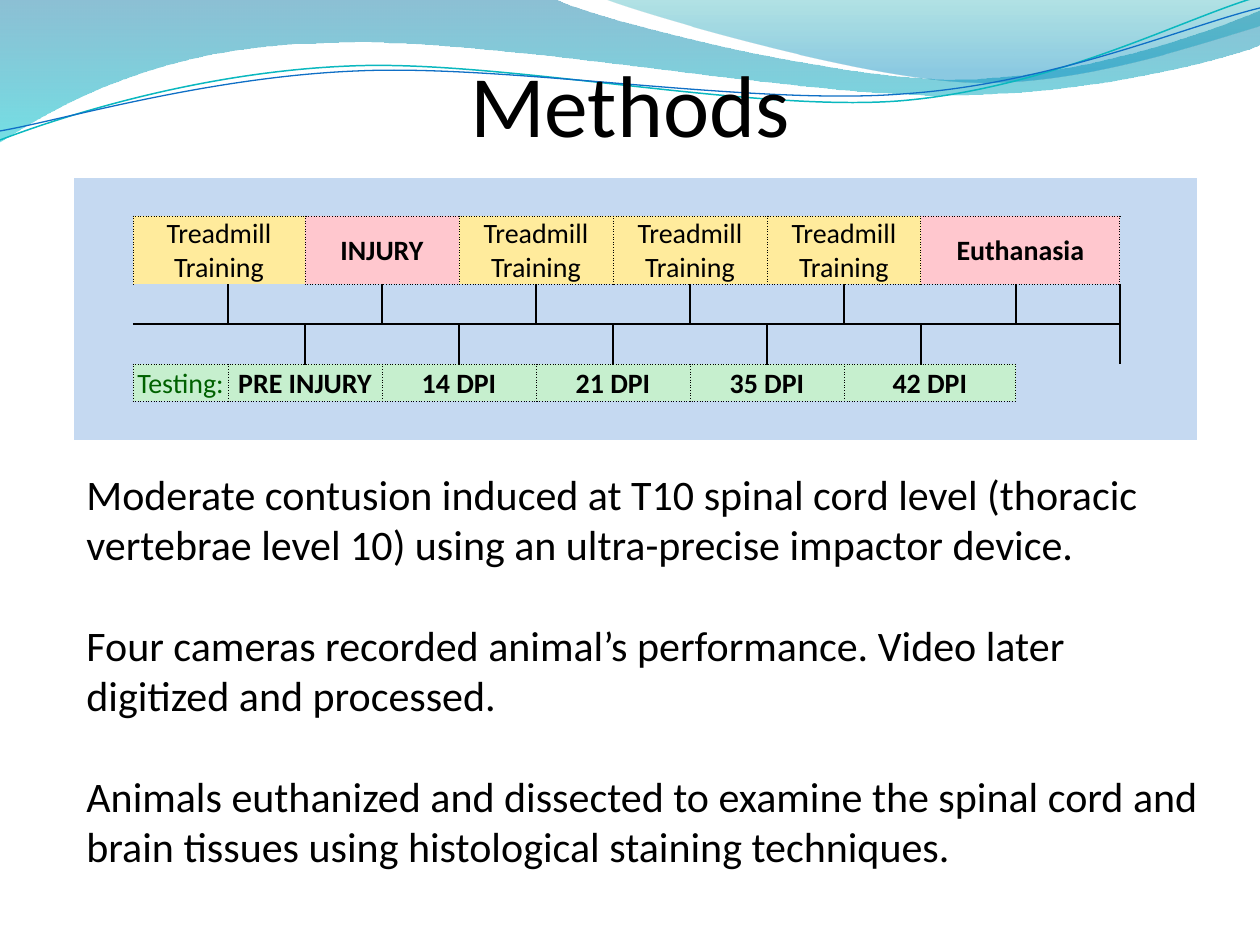
"""Build the Methods slide: a study timeline table above three notes."""
import lxml.etree
import pptx
import pptx.dml.color
import pptx.enum.text
import pptx.oxml.ns
import pptx.util

SCALE = 914400 / 126
COLORS = {
    "ink": "000000", "panel": "C5D9F1", "training": "FFEB9C", "event": "FFC7CE",
    "testing": "C6EFCE", "testing_ink": "006100", "teal": "0AB8BF", "blue": "0F6FC6",
    "wave_blue": "0074A1", "wave_cyan": "00C6CF", "wave_teal": "00A1A9", "wave_sky": "008BBF",
}
ALIGN = pptx.enum.text.PP_ALIGN
ANCHOR = pptx.enum.text.MSO_ANCHOR
qn = pptx.oxml.ns.qn


def emu(px):
    return pptx.util.Emu(round(px * SCALE))


def write(frame, text, size=16, color="ink", bold=False, align=ALIGN.CENTER, gap=0):
    frame.word_wrap = True
    for index, line in enumerate(text.split("\n")):
        para = frame.add_paragraph() if index else frame.paragraphs[0]
        para.alignment = align
        para.space_before = pptx.util.Pt(gap if index else 0)
        span = para.add_run()
        span.text = line
        span.font.name = "Calibri"
        span.font.size = pptx.util.Pt(size)
        span.font.bold = bold
        span.font.color.rgb = pptx.dml.color.RGBColor.from_string(COLORS[color])


deck = pptx.Presentation()
deck.slide_width, deck.slide_height = emu(1260), emu(945)
page = deck.slides.add_slide(deck.slide_layouts[6])

# Two numbers make a straight step, six make a cubic curve.
waves = [
    {"start": (0, 0), "stops": [("wave_blue", 0, 45), ("wave_cyan", 1, 55)],
     "steps": [(554, -1), (600, 21, 837, 79, 955, 79), (1075, 79, 1207, 33, 1260, 11),
               (1261, 45), (1238, 55, 1096, 96, 940, 95), (784, 95, 481, 35, 324, 43),
               (163, 45, 58, 105, -1, 142), (0, 0)]},
    {"start": (604, -1), "stops": [("wave_teal", 0, 30), ("wave_sky", 0.8, 45)],
     "steps": [(641, 14, 859, 78, 969, 82), (1079, 87, 1211, 40, 1260, 26), (1260, 0),
               (604, -1)]},
    {"start": (0, 140), "line": ("teal", 0.85),
     "steps": [(60, 117, 199, 72, 349, 66), (498, 59, 747, 112, 898, 101),
               (1050, 89, 1182, 19, 1257, -3)]},
    {"start": (0, 131), "line": ("blue", 0.75),
     "steps": [(59, 121, 207, 77, 357, 71), (508, 64, 752, 106, 903, 94),
               (1053, 84, 1186, 26, 1260, 8)]},
]
for wave in waves:
    corners = [(emu(step[i]), emu(step[i + 1]))
               for step in wave["steps"] for i in range(0, len(step), 2)]
    builder = page.shapes.build_freeform(*map(emu, wave["start"]))
    builder.add_line_segments(corners, close="stops" in wave)
    shape = builder.convert_to_shape()
    shape.shadow.inherit = False
    segments = iter(list(shape._element.spPr.iter(qn("a:lnTo"))))
    for step in wave["steps"]:
        segment = next(segments)
        if len(step) == 6:
            curve = lxml.etree.Element(qn("a:cubicBezTo"))
            segment.addprevious(curve)
            for line in (segment, next(segments), next(segments)):
                curve.append(line[0])
                line.getparent().remove(line)
    if "line" in wave:
        color, width = wave["line"]
        shape.fill.background()
        shape.line.color.rgb = pptx.dml.color.RGBColor.from_string(COLORS[color])
        shape.line.width = pptx.util.Pt(width)
        continue
    shape.line.fill.background()
    shape.fill.gradient()
    shape.fill.gradient_angle = 270
    for stop, (color, position, _) in zip(shape.fill.gradient_stops, wave["stops"]):
        stop.position = position
        stop.color.rgb = pptx.dml.color.RGBColor.from_string(COLORS[color])
    for node, (_, _, opacity) in zip(shape._element.spPr.iter(qn("a:srgbClr")), wave["stops"]):
        lxml.etree.SubElement(node, qn("a:alpha"), val=str(opacity * 1000))

title = page.shapes.add_textbox(emu(63), emu(21), emu(1134), emu(157)).text_frame
title.margin_left = title.margin_right = title.margin_bottom = 0
title.vertical_anchor = ANCHOR.MIDDLE
write(title, "Methods", size=50)

notes = page.shapes.add_textbox(emu(74), emu(462), emu(1155), emu(420)).text_frame
notes.auto_size = pptx.enum.text.MSO_AUTO_SIZE.SHAPE_TO_FIT_TEXT
write(notes, "Moderate contusion induced at T10 spinal cord level (thoracic vertebrae level 10) "
      "using an ultra-precise impactor device.\n"
      "Four cameras recorded animal’s performance. Video later digitized and processed.\n"
      "Animals euthanized and dissected to examine the spinal cord and brain tissues "
      "using histological staining techniques.", size=24, align=ALIGN.LEFT, gap=28.7)

widths = [59, 95] + [77] * 9 + [95, 77, 27, 77]
heights = [38, 68, 40, 40, 37, 39]
table = page.shapes.add_table(len(heights), len(widths), emu(74), emu(178),
                              emu(sum(widths)), emu(sum(heights))).table
table.first_row = table.horz_banding = False
for column, width in zip(table.columns, widths):
    column.width = emu(width)
for row, height in zip(table.rows, heights):
    row.height = emu(height)

training = ("Treadmill Training", "training", "ink", False, ANCHOR.BOTTOM)
boxes = {
    (1, 1, 2): training,
    (1, 3, 4): ("INJURY", "event", "ink", True, ANCHOR.MIDDLE),
    (1, 5, 6): training,
    (1, 7, 8): training,
    (1, 9, 10): training,
    (1, 11, 13): ("Euthanasia", "event", "ink", True, ANCHOR.MIDDLE),
    (4, 1, 1): ("Testing:", "testing", "testing_ink", False, ANCHOR.BOTTOM),
}
for index, label in enumerate(["PRE INJURY", "14 DPI", "21 DPI", "35 DPI", "42 DPI"]):
    first = 2 + 2 * index
    boxes[4, first, first + 1] = (label, "testing", "ink", True, ANCHOR.BOTTOM)

# Each edge is kept once, so neighbouring cells always agree.
edges, fills = {}, {}
for (row, first, last), (text, fill, ink, bold, anchor) in boxes.items():
    edges["v", row, first] = edges["v", row, last + 1] = "dotted"
    for col in range(first, last + 1):
        edges["h", row, col] = edges["h", row + 1, col] = "dotted"
        fills[row, col] = fill
    cell = table.cell(row, first)
    if last > first:
        cell.merge(table.cell(row, last))
    cell.vertical_anchor = anchor
    write(cell.text_frame, text, color=ink, bold=bold)
for col in (1, 2):
    del edges["h", 2, col]
for col in range(1, 14):
    edges["h", 3, col] = "solid"
for row, ticks in {2: (1, 3, 5, 7, 9, 11, 13), 3: (2, 4, 6, 8, 10, 13)}.items():
    for col in ticks:
        edges["v", row, col + 1] = "solid"

for row in range(len(heights)):
    for col in range(len(widths)):
        cell = table.cell(row, col)
        cell.margin_left = cell.margin_right = cell.margin_top = emu(1)
        cell.margin_bottom = 0
        if not cell.text_frame.text:
            cell.text_frame.paragraphs[0]._p.get_or_add_endParaRPr().set("sz", "1000")
        sides = {"a:lnL": ("v", row, col), "a:lnR": ("v", row, col + 1),
                 "a:lnT": ("h", row, col), "a:lnB": ("h", row + 1, col)}
        for tag, key in sides.items():
            style = edges.get(key)
            border = lxml.etree.SubElement(cell._tc.get_or_add_tcPr(), qn(tag))
            if style is None:
                lxml.etree.SubElement(border, qn("a:noFill"))
                continue
            border.set("w", str(pptx.util.Pt(1.5 if style == "solid" else 0.5)))
            paint = lxml.etree.SubElement(border, qn("a:solidFill"))
            lxml.etree.SubElement(paint, qn("a:srgbClr"), val=COLORS["ink"])
            lxml.etree.SubElement(border, qn("a:prstDash"),
                                  val="solid" if style == "solid" else "sysDot")
        cell.fill.solid()
        cell.fill.fore_color.rgb = pptx.dml.color.RGBColor.from_string(
            COLORS[fills.get((row, col), "panel")])

deck.save("out.pptx")
